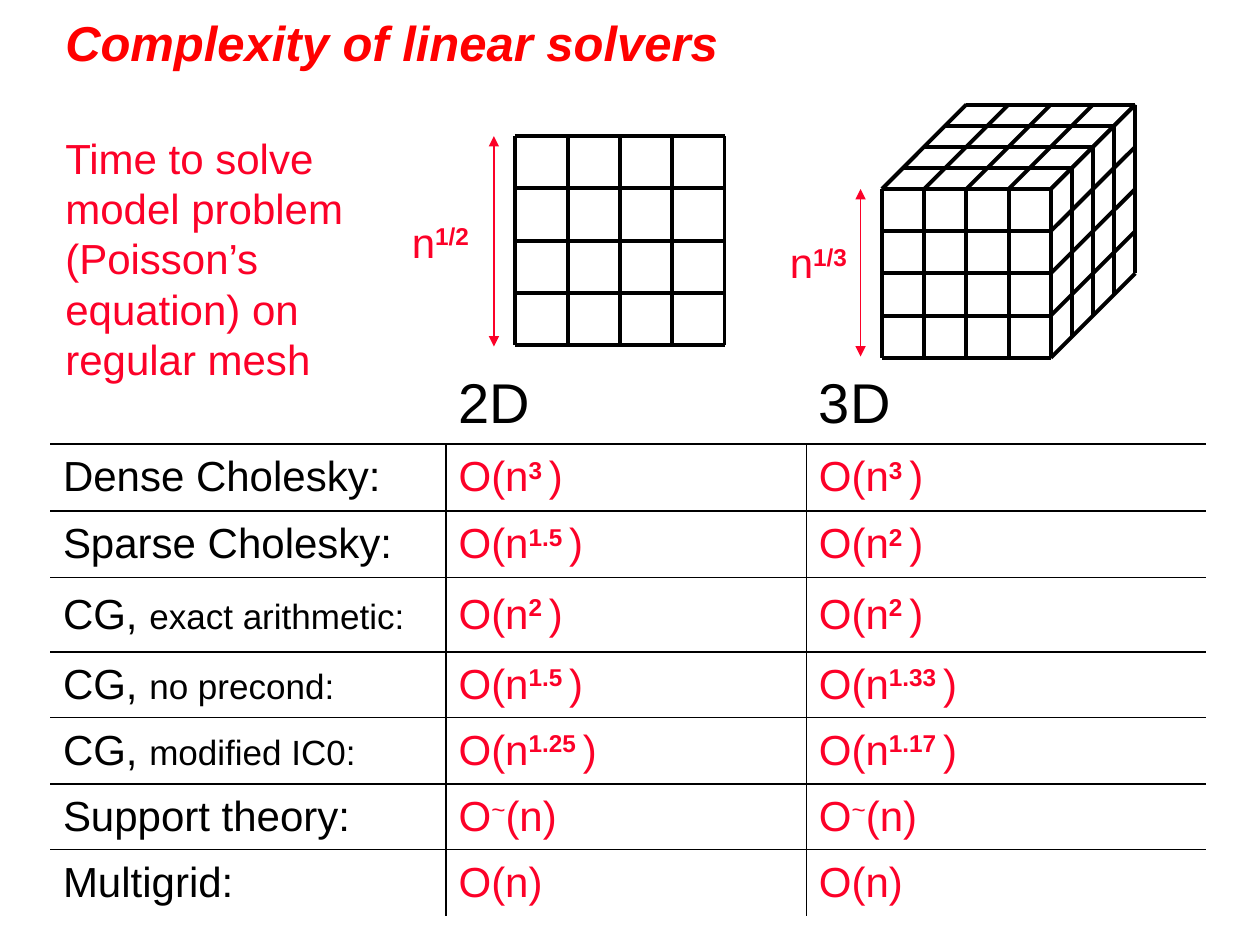
from lxml import etree
from pptx import Presentation
from pptx.dml.color import RGBColor
from pptx.enum.shapes import MSO_CONNECTOR as CONNECTOR
from pptx.enum.text import MSO_ANCHOR as ANCHOR
from pptx.oxml.ns import qn
from pptx.util import Inches, Pt

COLORS = {"title": "FF0000", "accent": "FC0128", "ink": "000000"}

prs = Presentation()
prs.slide_width, prs.slide_height = Inches(10), Inches(7.5)
slide = prs.slides.add_slide(prs.slide_layouts[6])


def add_runs(paragraph, runs, color, size=24):
    """Each run is (text, style); style is "", "sup", "bold sup", "small" or "title"."""
    for text, style in runs:
        run = paragraph.add_run()
        run.text = text
        run.font.name = "Arial"
        run.font.size = Pt(20 if style == "small" else size)
        run.font.color.rgb = RGBColor.from_string(COLORS[color])
        run.font.bold = style in ("bold sup", "title")
        run.font.italic = style == "title"
        if "sup" in style:
            run.font._element.set("baseline", "30000")


def add_line(x1, y1, x2, y2, color="ink", width=2.25, arrows=False):
    line = slide.shapes.add_connector(
        CONNECTOR.STRAIGHT, Inches(x1), Inches(y1), Inches(x2), Inches(y2))
    line.line.color.rgb = RGBColor.from_string(COLORS[color])
    line.line.width = Pt(width)
    if arrows:
        for end in ("a:headEnd", "a:tailEnd"):
            etree.SubElement(line.line._get_or_add_ln(), qn(end), type="triangle")
    etree.SubElement(line._element.spPr, qn("a:effectLst"))


# Title, problem statement and mesh side labels
texts = [
    (0.42, 0, 9.33, 0.67, [("Complexity of linear solvers", "title")], "title", 28, True),
    (0.42, 1, 2.42, 2.1,
     [("Time to solve model problem (Poisson’s equation) on regular mesh", "")],
     "accent", 24, True),
    (3.17, 1.67, 0.7, 0.5, [("n", ""), ("1/2", "bold sup")], "accent", 24, False),
    (6.17, 1.83, 0.7, 0.5, [("n", ""), ("1/3", "bold sup")], "accent", 24, False),
]
for left, top, width, height, runs, color, size, wrap in texts:
    frame = slide.shapes.add_textbox(
        Inches(left), Inches(top), Inches(width), Inches(height)).text_frame
    frame.word_wrap = wrap
    frame.vertical_anchor = ANCHOR.MIDDLE if color == "title" else ANCHOR.TOP
    add_runs(frame.paragraphs[0], runs, color, size)

# Complexity table: label runs, then the exponents in 2D and 3D
solvers = [
    ([("Dense Cholesky:", "")], "3", "3"),
    ([("Sparse Cholesky:", "")], "1.5", "2"),
    ([("CG, ", ""), ("exact arithmetic:", "small")], "2", "2"),
    ([("CG, ", ""), ("no precond:", "small")], "1.5", "1.33"),
    ([("CG, ", ""), ("modified IC0:", "small")], "1.25", "1.17"),
    ([("Support theory:", "")], "~", "~"),
    ([("Multigrid:", "")], "", ""),
]
rows = [[[], [("2D", "")], [("3D", "")]]]
for label, *exponents in solvers:
    row = [label]
    for exponent in exponents:
        if exponent == "~":
            row.append([("O", ""), ("~", "sup"), ("(n)", "")])
        elif exponent:
            row.append([("O(n", ""), (exponent + " ", "bold sup"), (")", "")])
        else:
            row.append([("O(n)", "")])
    rows.append(row)

table = slide.shapes.add_table(
    len(rows), 3, Inches(0.4), Inches(2.89), Inches(9.17), Inches(4.38)).table
table.first_row = table.horz_banding = False
for column, width in zip(table.columns, (3.14, 2.86, 3.17)):
    column.width = Inches(width)
for table_row, height in zip(table.rows, (0.63, 0.53, 0.53, 0.59, 0.52, 0.53, 0.52, 0.53)):
    table_row.height = Inches(height)

last = len(rows) - 1
for r, row in enumerate(rows):
    for c, runs in enumerate(row):
        cell = table.cell(r, c)
        cell.vertical_anchor = ANCHOR.MIDDLE
        cell.fill.background()
        color = "accent" if r and c else "ink"
        add_runs(cell.text_frame.paragraphs[0], runs, color, 24 if r else 32)
        # Only inner rules show, and the header row has no vertical ones
        sides = {"L": r > 0 and c > 0, "R": r > 0 and c < 2, "T": r > 0, "B": r < last}
        properties = cell._tc.get_or_add_tcPr()
        for index, (side, visible) in enumerate(sides.items()):
            border = etree.Element(qn("a:ln" + side), w=str(Pt(1)))
            if visible:
                fill = etree.SubElement(border, qn("a:solidFill"))
                etree.SubElement(fill, qn("a:srgbClr"), val=COLORS["ink"])
            else:
                etree.SubElement(border, qn("a:noFill"))
            properties.insert(index, border)

# 2D mesh: four by four squares
CELLS = 4
left, top, side = 4.09, 1.08, 1.66
for i in range(CELLS + 1):
    step = i * side / CELLS
    add_line(left, top + step, left + side, top + step)
    add_line(left + step, top + side, left + step, top)
add_line(3.92, 2.75, 3.92, 1.08, "accent", 1, arrows=True)

# 3D mesh: front, top and right faces of a cube
left, top, side, depth = 7, 1.5, 1.34, 0.67
right, bottom = left + side, top + side
for i in range(CELLS + 1):
    step, shift = i * side / CELLS, i * depth / CELLS
    add_line(left, top + step, right, top + step)
    add_line(left + step, bottom, left + step, top)
    add_line(left + shift, top - shift, right + shift, top - shift)
    add_line(left + step, top, left + step + depth, top - depth)
    add_line(right + shift, top - shift, right + shift, bottom - shift)
    add_line(right + depth, top + step - depth, right, top + step)
add_line(6.83, 2.83, 6.83, 1.5, "accent", 1, arrows=True)

prs.save("out.pptx")
